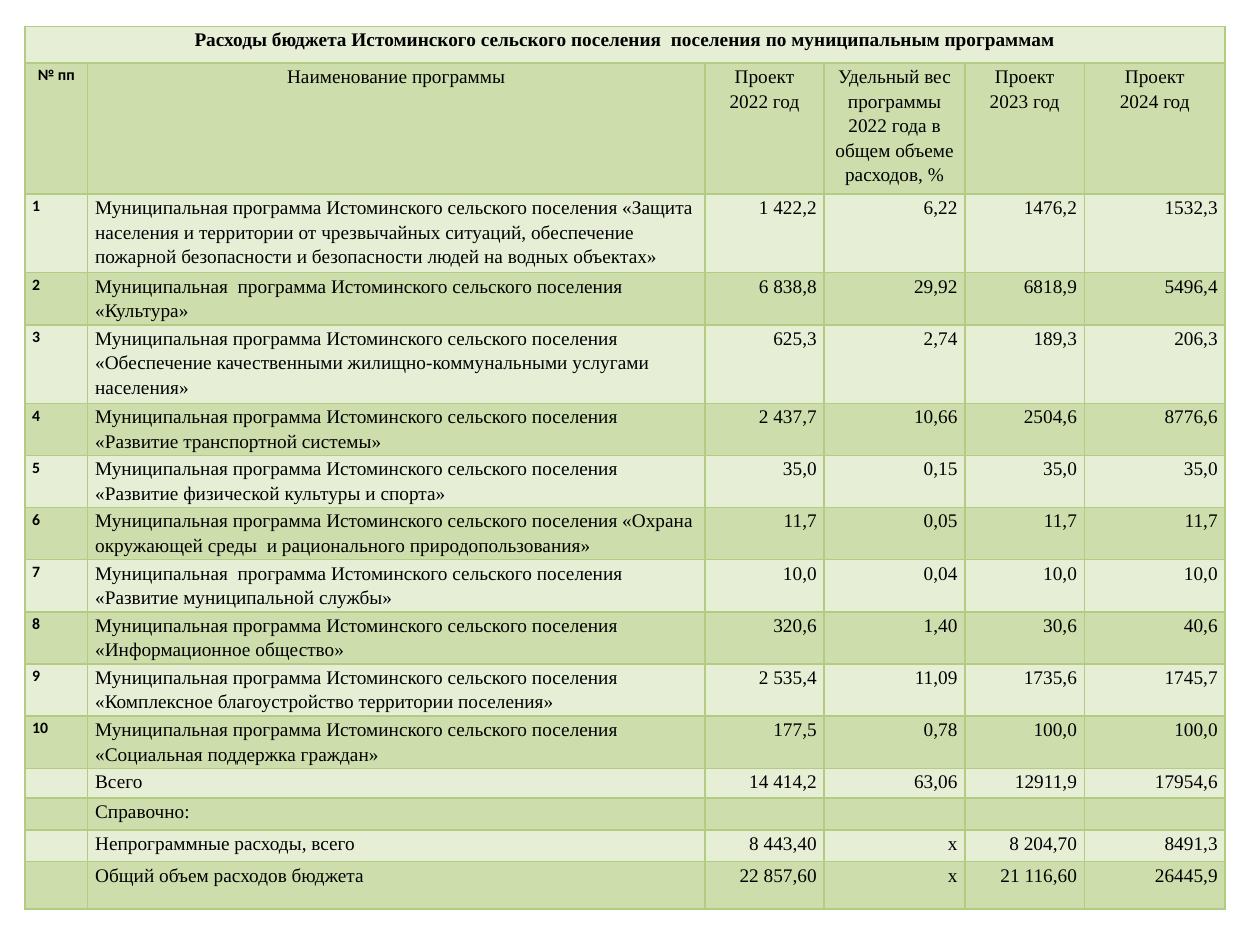
from dataclasses import dataclass

from lxml.etree import SubElement
from pptx import Presentation
from pptx.dml.color import RGBColor
from pptx.enum.text import PP_ALIGN
from pptx.oxml.ns import qn
from pptx.util import Cm, Pt


@dataclass(frozen=True)
class Theme:
    text: str = "000000"
    border: str = "B3CC82"
    bands: tuple = ("E6EED5", "CDDDAC")
    body_font: str = "Times New Roman"
    number_font: str = "Calibri"
    body_size: int = 11
    number_size: int = 9
    line_spacing: float = 1.15
    border_width: int = 1


THEME = Theme()

TITLE = "Расходы бюджета Истоминского сельского поселения  поселения по муниципальным программам"
HEADERS = [
    "№ пп",
    "Наименование программы",
    "Проект\n2022 год",
    "Удельный вес программы 2022 года в общем объеме расходов, %",
    "Проект\n2023 год",
    "Проект\n2024 год",
]
PROGRAMMES = [
    ("Муниципальная программа Истоминского сельского поселения «Защита населения и территории "
     "от чрезвычайных ситуаций, обеспечение пожарной безопасности и безопасности людей на водных объектах»",
     "1 422,2", "6,22", "1476,2", "1532,3"),
    ("Муниципальная  программа Истоминского сельского поселения «Культура»",
     "6 838,8", "29,92", "6818,9", "5496,4"),
    ("Муниципальная программа Истоминского сельского поселения  «Обеспечение качественными "
     "жилищно-коммунальными услугами населения»",
     "625,3", "2,74", "189,3", "206,3"),
    ("Муниципальная программа Истоминского сельского поселения  «Развитие транспортной системы»",
     "2 437,7", "10,66", "2504,6", "8776,6"),
    ("Муниципальная программа Истоминского сельского поселения  «Развитие физической культуры и спорта»",
     "35,0", "0,15", "35,0", "35,0"),
    ("Муниципальная программа Истоминского сельского поселения «Охрана окружающей среды  "
     "и рационального природопользования»",
     "11,7", "0,05", "11,7", "11,7"),
    ("Муниципальная  программа Истоминского сельского поселения «Развитие муниципальной службы»",
     "10,0", "0,04", "10,0", "10,0"),
    ("Муниципальная программа Истоминского сельского поселения «Информационное общество»",
     "320,6", "1,40", "30,6", "40,6"),
    ("Муниципальная программа Истоминского сельского поселения «Комплексное благоустройство "
     "территории поселения»",
     "2 535,4", "11,09", "1735,6", "1745,7"),
    ("Муниципальная программа Истоминского сельского поселения «Социальная поддержка граждан»",
     "177,5", "0,78", "100,0", "100,0"),
]
TOTALS = [
    ("Всего", "14 414,2", "63,06", "12911,9", "17954,6"),
    ("Справочно:", "", "", "", ""),
    ("Непрограммные расходы, всего", "8 443,40", "х", "8 204,70", "8491,3"),
    ("Общий объем расходов бюджета", "22 857,60", "х", "21 116,60", "26445,9"),
]
COLUMN_WIDTHS = [1.27, 12.45, 2.41, 2.84, 2.41, 2.84]
TWO_LINES, THREE_LINES = 1.05, 1.58
ROW_HEIGHTS = [0.74, 2.64, THREE_LINES, TWO_LINES, THREE_LINES, *[TWO_LINES] * 7, 0.6, 0.64, 0.64, 0.95]


def write_text(cell, text, *, align=PP_ALIGN.LEFT, font=THEME.body_font, size=THEME.body_size, bold=False):
    cell.margin_left = cell.margin_right = Cm(0.15)
    cell.margin_top = cell.margin_bottom = 0
    frame = cell.text_frame
    frame.text = text
    for paragraph in frame.paragraphs:
        paragraph.alignment = align
        paragraph.line_spacing = THEME.line_spacing
        for run in paragraph.runs:
            run.font.name = font
            run.font.size = Pt(size)
            run.font.bold = bold
            run.font.color.rgb = RGBColor.from_string(THEME.text)
        if not paragraph.runs:
            SubElement(paragraph._p, qn("a:endParaRPr"), sz=str(size * 100))


def paint_cell(cell, fill):
    properties = cell._tc.get_or_add_tcPr()
    for side in ("a:lnL", "a:lnR", "a:lnT", "a:lnB"):
        line = SubElement(properties, qn(side), w=str(Pt(THEME.border_width)))
        SubElement(SubElement(line, qn("a:solidFill")), qn("a:srgbClr"), val=THEME.border)
    cell.fill.solid()
    cell.fill.fore_color.rgb = RGBColor.from_string(fill)


def cell_format(row, column):
    number = {"font": THEME.number_font, "size": THEME.number_size, "bold": True}
    if row == 0:
        return {"align": PP_ALIGN.CENTER, "bold": True}
    style = number if column == 0 else {}
    if row == 1:
        return {**style, "align": PP_ALIGN.CENTER}
    return {**style, "align": PP_ALIGN.RIGHT if column > 1 else PP_ALIGN.LEFT}


def add_budget_table(slide, left, top, width, height):
    rows = [
        [TITLE] + [""] * (len(HEADERS) - 1),
        HEADERS,
        *[[str(number), *programme] for number, programme in enumerate(PROGRAMMES, 1)],
        *[["", *total] for total in TOTALS],
    ]
    table = slide.shapes.add_table(len(rows), len(HEADERS), left, top, width, height).table
    table.first_row = table.horz_banding = False
    for column, share in zip(table.columns, COLUMN_WIDTHS):
        column.width = round(width * share / sum(COLUMN_WIDTHS))
    for row, share in zip(table.rows, ROW_HEIGHTS):
        row.height = round(height * share / sum(ROW_HEIGHTS))
    for row_index, texts in enumerate(rows):
        for column_index, text in enumerate(texts):
            cell = table.cell(row_index, column_index)
            write_text(cell, text, **cell_format(row_index, column_index))
            paint_cell(cell, THEME.bands[row_index % 2])
    table.cell(0, 0).merge(table.cell(0, len(HEADERS) - 1))


def main():
    presentation = Presentation()
    presentation.slide_width, presentation.slide_height = Cm(25.4), Cm(19.05)
    slide = presentation.slides.add_slide(presentation.slide_layouts[6])
    add_budget_table(slide, Cm(0.5), Cm(0.53), Cm(24.2), Cm(17.8))
    presentation.save("out.pptx")


if __name__ == "__main__":
    main()
